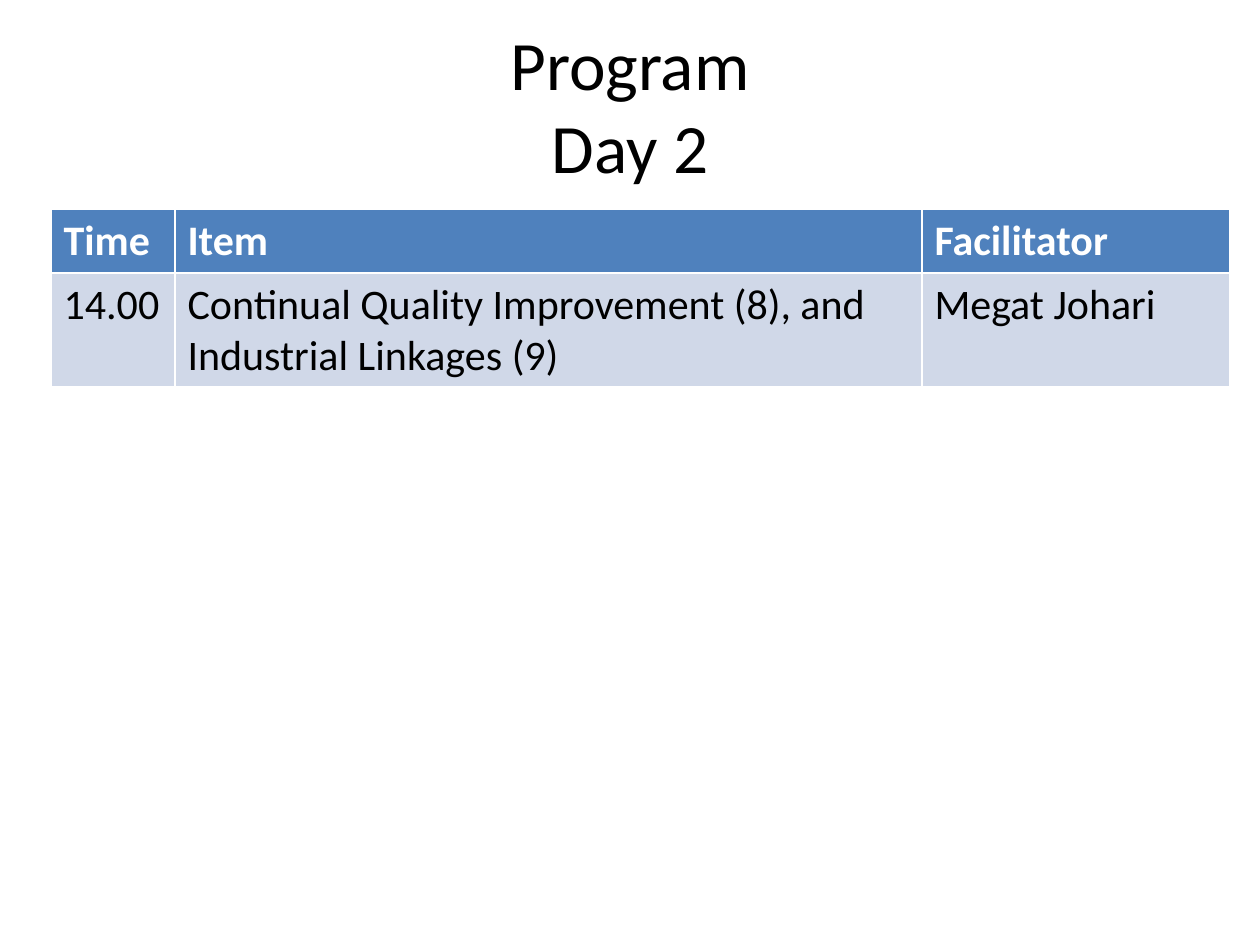
from dataclasses import dataclass

from pptx import Presentation
from pptx.dml.color import RGBColor
from pptx.enum.text import MSO_ANCHOR, PP_ALIGN
from pptx.slide import Slide
from pptx.util import Emu, Pt

PX_PER_INCH = 126
FONT = "Calibri"
CENTER = PP_ALIGN.CENTER
MIDDLE = MSO_ANCHOR.MIDDLE
BLANK_LAYOUT = 6

COLORS = {
    "black": "000000",
    "white": "FFFFFF",
    "header": "4F81BD",
    "body": "D0D8E8",
}


@dataclass(frozen=True)
class Session:
    """One table row, with its height in px and its look."""
    texts: tuple[str, str, str]
    height: int
    fill: str
    color: str
    bold: bool


COLUMN_WIDTHS = (124, 747, 308)
PROGRAM = (
    Session(("Time", "Item", "Facilitator"), 64, "header", "white", True),
    Session(
        ("14.00",
         "Continual Quality Improvement (8), and Industrial Linkages (9)",
         "Megat Johari"),
        113, "body", "black", False,
    ),
)


def px(length: int) -> Emu:
    return Emu(round(length * 914400 / PX_PER_INCH))


def rgb(name: str) -> RGBColor:
    return RGBColor.from_string(COLORS[name])


def style_font(paragraph, size: float, color: str, bold: bool = False) -> None:
    font = paragraph.font
    font.name = FONT
    font.size = Pt(size)
    font.bold = bold
    font.color.rgb = rgb(color)


def add_title(slide: Slide, text: str) -> None:
    heading = slide.shapes.add_textbox(px(63), px(25), px(1134), px(158))
    frame = heading.text_frame
    frame.word_wrap = True
    frame.vertical_anchor = MIDDLE
    paragraph = frame.paragraphs[0]
    paragraph.text = text
    paragraph.alignment = CENTER
    style_font(paragraph, 39.6, "black")


def add_program(slide: Slide, sessions: tuple[Session, ...]) -> None:
    """Draw the sessions; the default table style supplies the white borders."""
    table = slide.shapes.add_table(
        len(sessions), len(COLUMN_WIDTHS), px(51), px(209),
        px(sum(COLUMN_WIDTHS)), px(sum(s.height for s in sessions)),
    ).table
    for column, width in zip(table.columns, COLUMN_WIDTHS):
        column.width = px(width)
    for row, session in zip(table.rows, sessions):
        row.height = px(session.height)
        for cell, text in zip(row.cells, session.texts):
            cell.fill.solid()
            cell.fill.fore_color.rgb = rgb(session.fill)
            cell.text = text
            style_font(cell.text_frame.paragraphs[0], 24,
                       session.color, session.bold)


def main() -> None:
    presentation = Presentation()
    presentation.slide_width = px(1260)
    presentation.slide_height = px(945)
    slide = presentation.slides.add_slide(
        presentation.slide_layouts[BLANK_LAYOUT])
    add_title(slide, "Program\vDay 2")
    add_program(slide, PROGRAM)
    presentation.save("out.pptx")


if __name__ == "__main__":
    main()
